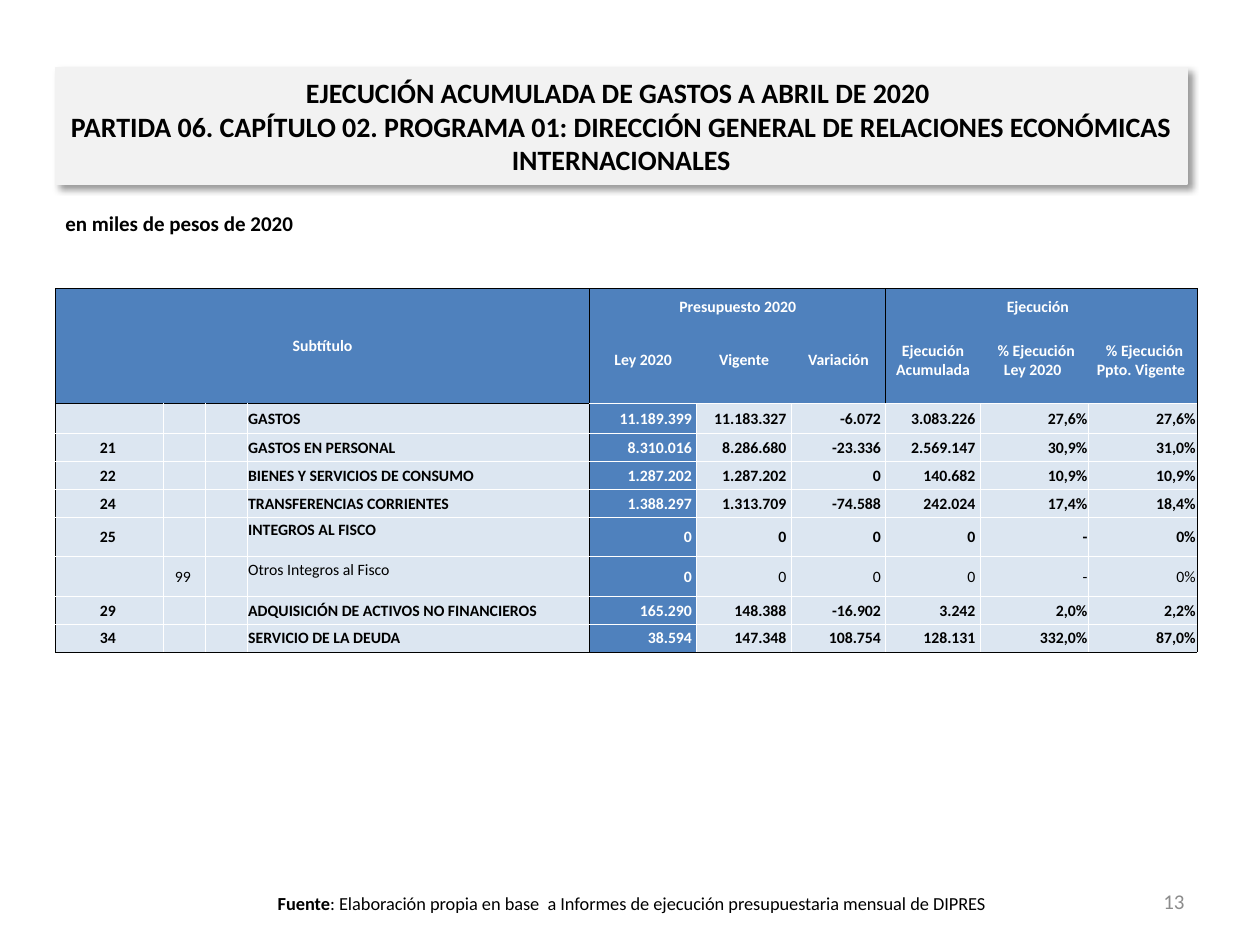
from dataclasses import dataclass
from typing import Optional

from lxml import etree
from pptx import Presentation
from pptx.dml.color import RGBColor
from pptx.enum.text import MSO_ANCHOR, MSO_AUTO_SIZE, PP_ALIGN
from pptx.oxml.ns import qn
from pptx.util import Inches, Pt

LEFT, CENTER, RIGHT = PP_ALIGN.LEFT, PP_ALIGN.CENTER, PP_ALIGN.RIGHT
TOP, MIDDLE, BOTTOM = MSO_ANCHOR.TOP, MSO_ANCHOR.MIDDLE, MSO_ANCHOR.BOTTOM
FONT = "Calibri"
COLORS = {
    "black": "000000", "white": "FFFFFF", "gray": "8C8C8C",
    "banner": "F2F2F2", "header": "4F81BD", "body": "DCE6F1",
}
SLIDE_WIDTH, SLIDE_HEIGHT = Inches(10), Inches(7.5)


def across(percent: float) -> int:
    return round(SLIDE_WIDTH * percent / 100)


def down(percent: float) -> int:
    return round(SLIDE_HEIGHT * percent / 100)


@dataclass
class Box:
    """A rectangle in percent of the slide's width and height."""
    left: float
    top: float
    width: float
    height: float

    def place(self) -> tuple:
        return across(self.left), down(self.top), across(self.width), down(self.height)


@dataclass
class Entry:
    """One budget line of the table."""
    label: str
    amounts: tuple
    shares: tuple
    subtitle: str = ""
    item: str = ""
    height: float = 2.96

    @property
    def bold(self) -> bool:
        return not self.item

    def texts(self) -> list:
        codes = [f"{code} " if code else "" for code in (self.subtitle, self.item)]
        return [*codes, "", self.label, *(f"{amount} " for amount in self.amounts), *self.shares]


TALL = 4.18
ENTRIES = [
    Entry("GASTOS", ("11.189.399", "11.183.327", "-6.072", "3.083.226"), ("27,6%", "27,6%"), height=3.17),
    Entry("GASTOS EN PERSONAL", ("8.310.016", "8.286.680", "-23.336", "2.569.147"), ("30,9%", "31,0%"), "21"),
    Entry("BIENES Y SERVICIOS DE CONSUMO", ("1.287.202", "1.287.202", "0", "140.682"), ("10,9%", "10,9%"), "22"),
    Entry("TRANSFERENCIAS CORRIENTES", ("1.388.297", "1.313.709", "-74.588", "242.024"), ("17,4%", "18,4%"), "24"),
    Entry("INTEGROS AL FISCO", ("0",) * 4, ("-", "0%"), "25", height=TALL),
    Entry("Otros Integros al Fisco", ("0",) * 4, ("-", "0%"), item="99", height=TALL),
    Entry("ADQUISICIÓN DE ACTIVOS NO FINANCIEROS", ("165.290", "148.388", "-16.902", "3.242"), ("2,0%", "2,2%"), "29"),
    Entry("SERVICIO DE LA DEUDA", ("38.594", "147.348", "108.754", "128.131"), ("332,0%", "87,0%"), "34"),
]
COLUMN_WIDTHS = [8.6, 3.3, 3.3, 27.2, 8.5, 7.5, 7.5, 7.5, 8.6, 8.6]
HEADER_HEIGHTS = [2.96, 9.21]
HEADER_ROWS = len(HEADER_HEIGHTS)
LAST_ROW = HEADER_ROWS + len(ENTRIES)
LAST_COLUMN = len(COLUMN_WIDTHS)
LABEL, LAW, EXECUTION = 3, 4, 7  # columns where the groups begin
COLUMN_TITLES = ["Ley 2020", "Vigente", "Variación", "Ejecución Acumulada",
                 " % Ejecución Ley 2020 ", " % Ejecución Ppto. Vigente "]


def rgb(name: str) -> RGBColor:
    return RGBColor.from_string(COLORS[name])


def format_runs(paragraph, size: float, color: str, bold: bool, align) -> None:
    paragraph.alignment = align
    for run in paragraph.runs:
        run.font.name, run.font.size, run.font.bold = FONT, Pt(size), bold
        run.font.color.rgb = rgb(color)


def add_text(slide, box: Box, text: str, size: float, color="black", bold=False, align=LEFT, anchor=MIDDLE):
    frame = slide.shapes.add_textbox(*box.place()).text_frame
    frame.word_wrap = True
    frame.vertical_anchor = anchor
    frame.text = text
    format_runs(frame.paragraphs[0], size, color, bold, align)
    return frame.paragraphs[0]


def add_shadow(shape) -> None:
    effects = etree.SubElement(shape.element.spPr, qn("a:effectLst"))
    shadow = etree.SubElement(effects, qn("a:outerShdw"), blurRad=str(Pt(4)), dist=str(Pt(3)),
                              dir=str(45 * 60000), algn="tl", rotWithShape="0")
    color = etree.SubElement(shadow, qn("a:srgbClr"), val=COLORS["black"])
    etree.SubElement(color, qn("a:alpha"), val="40000")


def vertical_border(edge: int, is_header: bool) -> Optional[str]:
    if edge in (0, LAW, LAST_COLUMN) or (is_header and edge == EXECUTION):
        return "black"
    return None if is_header else "white"


def horizontal_border(edge: int, column: int) -> Optional[str]:
    if edge in (0, LAST_ROW) or (edge == HEADER_ROWS and column < LAW):
        return "black"
    return "white" if edge >= HEADER_ROWS else None


def set_borders(cell, row: int, column: int) -> None:
    is_header = row < HEADER_ROWS
    spans = (cell.span_width, cell.span_height) if cell.is_merge_origin else (1, 1)
    borders = {
        "a:lnL": vertical_border(column, is_header),
        "a:lnR": vertical_border(column + spans[0], is_header),
        "a:lnT": horizontal_border(row, column),
        "a:lnB": horizontal_border(row + spans[1], column),
    }
    properties = cell._tc.get_or_add_tcPr()
    for tag, color in borders.items():
        line = etree.SubElement(properties, qn(tag), w=str(Pt(0.5)))
        if color is None:
            etree.SubElement(line, qn("a:noFill"))
        else:
            fill = etree.SubElement(line, qn("a:solidFill"))
            etree.SubElement(fill, qn("a:srgbClr"), val=COLORS[color])


def style_cell(cell, row: int, column: int) -> None:
    is_header = row < HEADER_ROWS
    is_blue = is_header or column == LAW
    entry = None if is_header else ENTRIES[row - HEADER_ROWS]
    set_borders(cell, row, column)
    cell.fill.solid()
    cell.fill.fore_color.rgb = rgb("header" if is_blue else "body")
    cell.margin_left = cell.margin_right = cell.margin_top = Inches(0.01)
    cell.margin_bottom = 0
    cell.vertical_anchor = BOTTOM if row == 0 and column >= LAW else MIDDLE
    if entry and entry.height == TALL and column == LABEL:
        cell.vertical_anchor, cell.margin_top = TOP, Inches(0.03)
    align = CENTER if is_header or column < LABEL else LEFT if column == LABEL else RIGHT
    bold = is_blue or entry.bold
    paragraph = cell.text_frame.paragraphs[0]
    format_runs(paragraph, 9, "white" if is_blue else "black", bold, align)
    if not paragraph.runs:
        etree.SubElement(paragraph._p, qn("a:endParaRPr"), sz="900")


def add_budget_table(slide) -> None:
    heights = HEADER_HEIGHTS + [entry.height for entry in ENTRIES]
    box = Box(4.4, 30.53, sum(COLUMN_WIDTHS), sum(heights))
    table = slide.shapes.add_table(LAST_ROW, LAST_COLUMN, *box.place()).table
    table.first_row = table.horz_banding = False
    for column, width in zip(table.columns, COLUMN_WIDTHS):
        column.width = across(width)
    for row, height in zip(table.rows, heights):
        row.height = down(height)

    # Merged header groups: title, first column, last row, last column
    for text, first, bottom, last in (("Subtítulo", 0, 1, LABEL),
                                      ("Presupuesto 2020", LAW, 0, EXECUTION - 1),
                                      ("Ejecución  ", EXECUTION, 0, LAST_COLUMN - 1)):
        table.cell(0, first).merge(table.cell(bottom, last))
        table.cell(0, first).text_frame.text = text

    lines = [[""] * LAW + COLUMN_TITLES] + [entry.texts() for entry in ENTRIES]
    for row, texts in enumerate(lines, start=1):
        for column, text in enumerate(texts):
            if text:
                table.cell(row, column).text_frame.text = text
    for row in range(LAST_ROW):
        for column in range(LAST_COLUMN):
            style_cell(table.cell(row, column), row, column)


def add_title(slide) -> None:
    title = slide.shapes.title
    title.left, title.top, title.width, title.height = Box(4.4, 7.2, 89.8, 12.27).place()
    title.fill.solid()
    title.fill.fore_color.rgb = title.line.color.rgb = rgb("banner")
    title.line.width = Pt(0.75)
    add_shadow(title)
    frame = title.text_frame
    frame.text = ("EJECUCIÓN ACUMULADA DE GASTOS A ABRIL DE 2020 \v"
                  "PARTIDA 06. CAPÍTULO 02. PROGRAMA 01: DIRECCIÓN GENERAL DE RELACIONES ECONÓMICAS INTERNACIONALES")
    frame.word_wrap, frame.auto_size, frame.vertical_anchor = True, MSO_AUTO_SIZE.SHAPE_TO_FIT_TEXT, MIDDLE
    frame.margin_left = frame.margin_right = Inches(0.11)
    format_runs(frame.paragraphs[0], 16, "black", True, CENTER)


def main() -> None:
    presentation = Presentation()
    presentation.slide_width, presentation.slide_height = SLIDE_WIDTH, SLIDE_HEIGHT
    slide = presentation.slides.add_slide(presentation.slide_layouts[5])

    # Heading and unit note
    add_title(slide)
    add_text(slide, Box(4.2, 21.6, 90, 6.67), "en miles de pesos de 2020", 12, bold=True, anchor=TOP)

    add_budget_table(slide)

    # Source and page number
    source = add_text(slide, Box(4.2, 94, 91.9, 3.2), "Fuente", 10.5, align=CENTER)
    source.add_run().text = ": Elaboración propia en base  a Informes de ejecución presupuestaria mensual de DIPRES"
    format_runs(source, 10.5, "black", False, CENTER)
    source.runs[0].font.bold = True
    add_text(slide, Box(71.7, 92.67, 23.3, 5.33), "13", 12, "gray", align=RIGHT)

    presentation.save("out.pptx")


if __name__ == "__main__":
    main()
